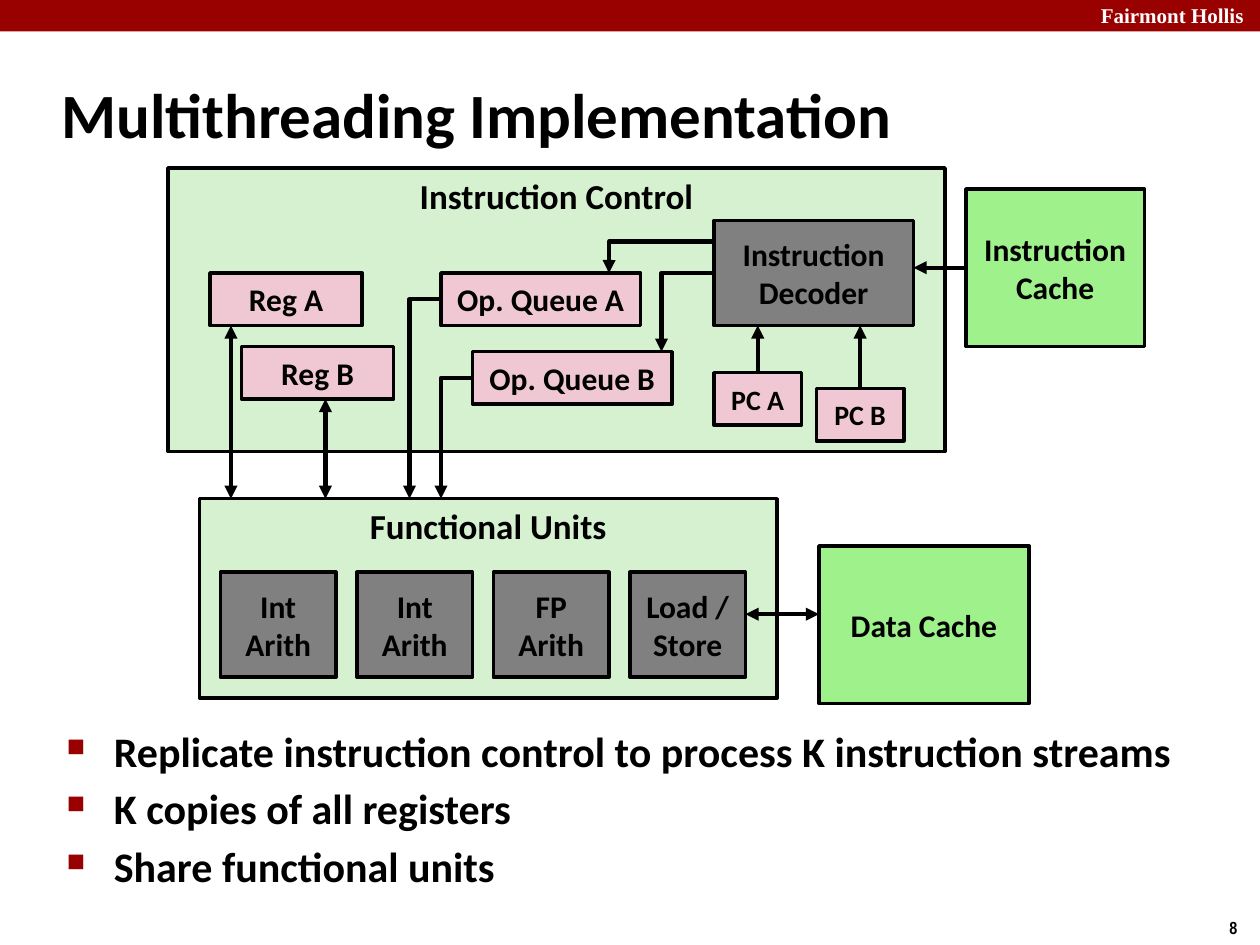
import pptx
import pptx.util
import pptx.dml.color
import pptx.enum.shapes
import pptx.enum.text
import pptx.oxml.ns
from lxml import etree

Pt = pptx.util.Pt
RGBColor = pptx.dml.color.RGBColor
qn = pptx.oxml.ns.qn
ALIGN = pptx.enum.text.PP_ALIGN
ANCHOR = pptx.enum.text.MSO_ANCHOR
CONNECTOR = pptx.enum.shapes.MSO_CONNECTOR

BLACK = RGBColor(0x00, 0x00, 0x00)
WHITE = RGBColor(0xFF, 0xFF, 0xFF)
DARK_RED = RGBColor(0x99, 0x00, 0x00)
PALE_GREEN = RGBColor(0xD5, 0xF1, 0xCF)
GREEN = RGBColor(0x9E, 0xF1, 0x8B)
PINK = RGBColor(0xF0, 0xC8, 0xD3)
GRAY = RGBColor(0x80, 0x80, 0x80)


def add_run(paragraph, text, size, font="Calibri", color=BLACK):
    run = paragraph.add_run()
    run.text = text
    run.font.name = font
    run.font.size = Pt(size)
    run.font.bold = True
    run.font.color.rgb = color


def add_paragraphs(text_frame, lines, size, font="Calibri", color=BLACK):
    for index, line in enumerate(lines):
        paragraph = text_frame.add_paragraph() if index else text_frame.paragraphs[0]
        add_run(paragraph, line, size, font, color)
    return text_frame.paragraphs


def add_text(slide, box, lines, size, font="Calibri", color=BLACK,
             anchor=ANCHOR.TOP, wrap=True):
    shape = slide.shapes.add_textbox(*map(Pt, box))
    shape.text_frame.word_wrap = wrap
    shape.text_frame.vertical_anchor = anchor
    return add_paragraphs(shape.text_frame, lines, size, font, color)


def add_box(slide, box, fill, lines=(), size=18, anchor=ANCHOR.MIDDLE, outlined=True):
    shape = slide.shapes.add_shape(
        pptx.enum.shapes.MSO_SHAPE.RECTANGLE, *map(Pt, box))
    shape.shadow.inherit = False
    shape.fill.solid()
    shape.fill.fore_color.rgb = fill
    if outlined:
        shape.line.color.rgb = BLACK
        shape.line.width = Pt(2)
    else:
        shape.line.fill.background()
    shape.text_frame.word_wrap = True
    shape.text_frame.vertical_anchor = anchor
    for paragraph in add_paragraphs(shape.text_frame, lines, size):
        paragraph.alignment = ALIGN.CENTER
    return shape


def add_arrow(slide, start, end, head=False, tail=True, kind=CONNECTOR.STRAIGHT):
    connector = slide.shapes.add_connector(kind, *map(Pt, start + end))
    connector.line.color.rgb = BLACK
    connector.line.width = Pt(2.5)
    line = connector.line._get_or_add_ln()
    for tag, shown in (("a:headEnd", head), ("a:tailEnd", tail)):
        if shown:
            etree.SubElement(line, qn(tag), type="triangle")
    etree.SubElement(connector._element.spPr, qn("a:effectLst"))
    return connector


def add_elbow(slide, start, end, preset="bentConnector2", adjustment=None):
    """Arrow that runs left from start, then down to end."""
    connector = add_arrow(slide, start, end, kind=CONNECTOR.ELBOW)
    properties = connector._element.spPr
    transform = properties.find(qn("a:xfrm"))
    transform.attrib.pop("flipH", None)
    transform.set("rot", "10800000")
    transform.set("flipV", "1")
    geometry = properties.find(qn("a:prstGeom"))
    geometry.set("prst", preset)
    if adjustment is not None:
        guides = geometry.find(qn("a:avLst"))
        etree.SubElement(guides, qn("a:gd"), name="adj1", fmla=f"val {adjustment}")


def add_bullet(paragraph, indent):
    paragraph.space_before = Pt(4)
    properties = paragraph._p.get_or_add_pPr()
    properties.set("marL", str(Pt(indent)))
    properties.set("indent", str(-Pt(indent)))
    color = etree.SubElement(properties, qn("a:buClr"))
    etree.SubElement(color, qn("a:srgbClr"), val=str(DARK_RED))
    etree.SubElement(properties, qn("a:buSzPct"), val="60000")
    etree.SubElement(properties, qn("a:buChar"), char="■")


def add_frame(slide):
    add_box(slide, (0, 0, 720, 18), DARK_RED, outlined=False)
    add_text(slide, (622, -2, 103, 22), ["Fairmont Hollis"], 12,
             "Times New Roman", WHITE)
    add_text(slide, (695.5, 520.5, 24.5, 19.5), ["8"], 10, "Arial Narrow", wrap=False)
    add_text(slide, (28, 34.5, 650, 60), ["Multithreading Implementation"], 36,
             anchor=ANCHOR.MIDDLE)


def add_diagram(slide):
    # Functional units
    add_box(slide, (114, 285, 330, 114), PALE_GREEN, ["Functional Units"], 20, ANCHOR.TOP)
    units = [("Int", "Arith"), ("Int", "Arith"), ("FP", "Arith"), ("Load /", "Store")]
    for index, lines in enumerate(units):
        add_box(slide, (126 + 78 * index, 327, 66, 60), GRAY, lines)

    # Instruction control
    add_box(slide, (96, 96, 444, 162), PALE_GREEN, ["Instruction Control"], 20, ANCHOR.TOP)
    add_box(slide, (408, 126, 114, 60), GRAY, ["Instruction Decoder"])
    for name, left, top, width in (
            ("Reg A", 120, 156, 87), ("Reg B", 138, 198, 87),
            ("Op. Queue A", 252, 156, 114), ("Op. Queue B", 270, 201, 114)):
        add_box(slide, (left, top, width, 30), PINK, [name])

    # Caches
    add_box(slide, (468, 312, 120, 90), GREEN, ["Data Cache"])
    instruction_cache = add_box(slide, (552, 108, 102, 90), GREEN, ["Instruction", "Cache"])
    add_arrow(slide, (468, 351), (426, 351), head=True)
    fetch = add_arrow(slide, (552, 153), (522, 153))
    fetch.begin_connect(instruction_cache, 1)

    # Program counters feeding the decoder
    for name, left, top in (("PC A", 408, 213), ("PC B", 466.5, 222)):
        counter = add_box(slide, (left, top, 50, 30), PINK, [name], 16)
        arrow = add_arrow(slide, (left + 25, top), (left + 25, 186))
        arrow.begin_connect(counter, 0)

    # Registers to functional units
    for x, top in ((132, 186), (186, 228)):
        add_arrow(slide, (x, top), (x, 285), head=True)

    # Decoder to queues, queues to functional units
    add_elbow(slide, (408, 138), (348, 156), "bentConnector3", 99900)
    add_elbow(slide, (408, 156), (378, 201))
    add_elbow(slide, (252, 171), (234, 285))
    add_elbow(slide, (270, 216), (252, 285))


def add_points(slide):
    lines = ["Replicate instruction control to process K instruction streams",
             "K copies of all registers",
             "Share functional units"]
    for paragraph in add_text(slide, (31, 411, 659, 96.5), lines, 24):
        add_bullet(paragraph, 27)


def main():
    presentation = pptx.Presentation()
    presentation.slide_width = Pt(720)
    presentation.slide_height = Pt(540)
    slide = presentation.slides.add_slide(presentation.slide_layouts[6])
    add_frame(slide)
    add_diagram(slide)
    add_points(slide)
    presentation.save("out.pptx")


if __name__ == "__main__":
    main()
